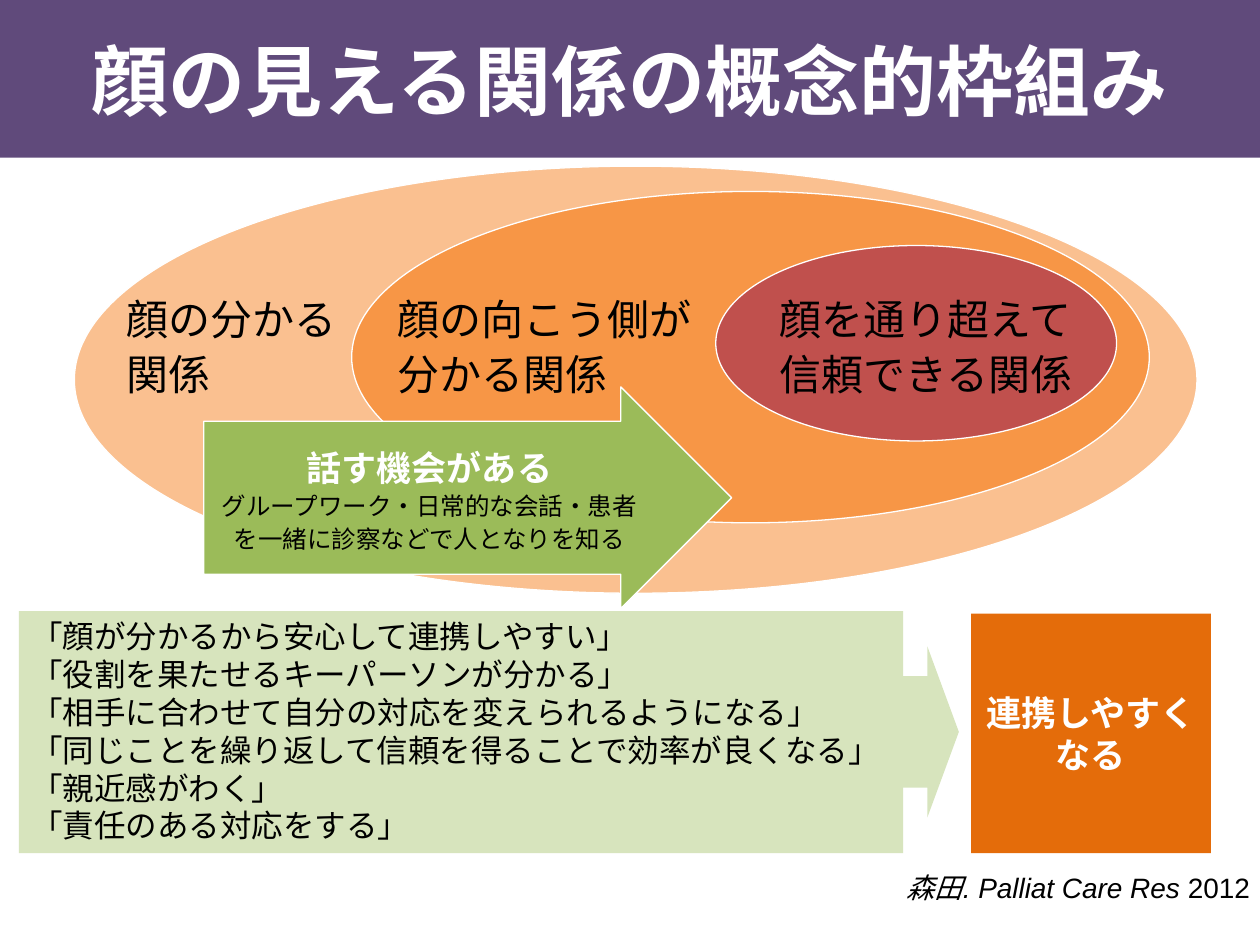
from lxml.etree import SubElement
from pptx import Presentation
from pptx.dml.color import RGBColor
from pptx.enum.shapes import MSO_SHAPE
from pptx.enum.text import MSO_ANCHOR, PP_ALIGN
from pptx.oxml.ns import qn
from pptx.util import Cm, Pt

COLORS = {
    "purple": "604A7B",
    "peach": "FAC090",
    "orange": "F79646",
    "red": "C0504D",
    "dark_orange": "E46C0A",
    "pale_green": "D7E4BD",
    "green": "9BBB59",
    "white": "FFFFFF",
    "black": "000000",
}
JAPANESE_FONT = "Noto Sans CJK JP"

TITLE = {"name": JAPANESE_FONT, "size": Pt(44), "bold": True, "color": "white"}
STRONG = {"name": "Calibri", "size": Pt(20), "bold": True, "color": "white"}
DETAIL = {"name": "Calibri", "size": Pt(14), "bold": False, "color": "black"}
LABEL = {"name": "Arial", "size": Pt(24), "color": "black"}
QUOTE = {"name": "Arial", "size": Pt(18), "color": "black"}
JOURNAL = {"name": "Arial", "size": Pt(16), "italic": True, "color": "black"}
YEAR = {**JOURNAL, "italic": False}

LEFT = {"alignment": PP_ALIGN.LEFT}
CENTER = {"alignment": PP_ALIGN.CENTER}
RIGHT = {"alignment": PP_ALIGN.RIGHT}
MIDDLE = {"word_wrap": True, "vertical_anchor": MSO_ANCHOR.MIDDLE}
TOP = {"word_wrap": True, "vertical_anchor": MSO_ANCHOR.TOP}
UNWRAPPED = {"word_wrap": False, "vertical_anchor": MSO_ANCHOR.TOP}

prs = Presentation()
prs.slide_width, prs.slide_height = Cm(25.4), Cm(19.05)
slide = prs.slides.add_slide(prs.slide_layouts[6])


def add_figure(preset, box, fill, outlined=False, adjustments=()):
    figure = slide.shapes.add_shape(preset, *map(Cm, box))
    figure.shadow.inherit = False
    figure.fill.solid()
    figure.fill.fore_color.rgb = RGBColor.from_string(COLORS[fill])
    if outlined:
        figure.line.color.rgb = RGBColor.from_string(COLORS["white"])
        figure.line.width = Pt(0.75)
    else:
        figure.line.fill.background()
    for index, value in enumerate(adjustments):
        figure.adjustments[index] = value
    return figure


def write(holder, paragraphs, frame_format, paragraph_format):
    frame = holder.text_frame
    for key, value in frame_format.items():
        setattr(frame, key, value)
    for index, pieces in enumerate(paragraphs):
        paragraph = frame.add_paragraph() if index else frame.paragraphs[0]
        for key, value in paragraph_format.items():
            setattr(paragraph, key, value)
        for text, text_format in pieces:
            for row, line in enumerate(text.split("\n")):
                if row:
                    paragraph.add_line_break()
                run = paragraph.add_run()
                run.text = line
                for key, value in text_format.items():
                    if key == "color":
                        run.font.color.rgb = RGBColor.from_string(COLORS[value])
                    else:
                        setattr(run.font, key, value)
                SubElement(run.font._element, qn("a:ea"), typeface=JAPANESE_FONT)


add_figure(MSO_SHAPE.RECTANGLE, (0, 0, 25.4, 3.18), "purple")
add_figure(MSO_SHAPE.OVAL, (1.5, 3.35, 22.63, 8.61), "peach", True)
add_figure(MSO_SHAPE.OVAL, (7.09, 3.86, 16.08, 6.68), "orange", True)

outcome = add_figure(MSO_SHAPE.RECTANGLE, (19.58, 12.37, 4.83, 4.83), "dark_orange")
write(outcome, [[("連携しやすくなる", STRONG)]], MIDDLE, CENTER)

title = slide.shapes.add_textbox(Cm(1.27), Cm(0.41), Cm(22.86), Cm(2.41))
write(title, [[("顔の見える関係の概念的枠組み", TITLE)]], MIDDLE, CENTER)

add_figure(MSO_SHAPE.OVAL, (14.43, 4.95, 8.08, 3.94), "red", True)

relationships = [
    (2.31, 4.78, "顔の分かる\n関係", UNWRAPPED),
    (7.77, 7.01, "顔の向こう側が\n分かる関係", TOP),
    (15.47, 7.04, "顔を通り超えて信頼できる関係", TOP),
]
for left, width, text, frame_format in relationships:
    label = slide.shapes.add_textbox(Cm(left), Cm(5.69), Cm(width), Cm(2.5))
    write(label, [[(text, LABEL)]], frame_format, {**LEFT, "line_spacing": 1.1})

quotes = [
    "「顔が分かるから安心して連携しやすい」",
    "「役割を果たせるキーパーソンが分かる」",
    "「相手に合わせて自分の対応を変えられるようになる」",
    "「同じことを繰り返して信頼を得ることで効率が良くなる」",
    "「親近感がわく」",
    "「責任のある対応をする」",
]
voices = add_figure(MSO_SHAPE.RECTANGLE, (0.38, 12.32, 17.83, 4.88), "pale_green")
write(voices, [[(quote, QUOTE)] for quote in quotes], TOP, LEFT)

add_figure(MSO_SHAPE.RIGHT_ARROW, (18.06, 13.03, 1.27, 3.45), "pale_green",
           adjustments=(0.65, 0.5))

citation = slide.shapes.add_textbox(Cm(17.42), Cm(17.42), Cm(8.03), Cm(0.94))
write(citation, [[("森田. Palliat Care Res ", JOURNAL), ("2012", YEAR)]], UNWRAPPED, RIGHT)

opportunity = add_figure(MSO_SHAPE.RIGHT_ARROW, (4.11, 7.8, 10.64, 4.47), "green", True,
                         (0.69, 0.5))
write(opportunity, [
    [("話す機会がある", STRONG)],
    [("グループワーク・日常的な会話・患者を一緒に診察などで人となりを知る", DETAIL)],
], MIDDLE, {**CENTER, "line_spacing": 1.1})

prs.save("out.pptx")
